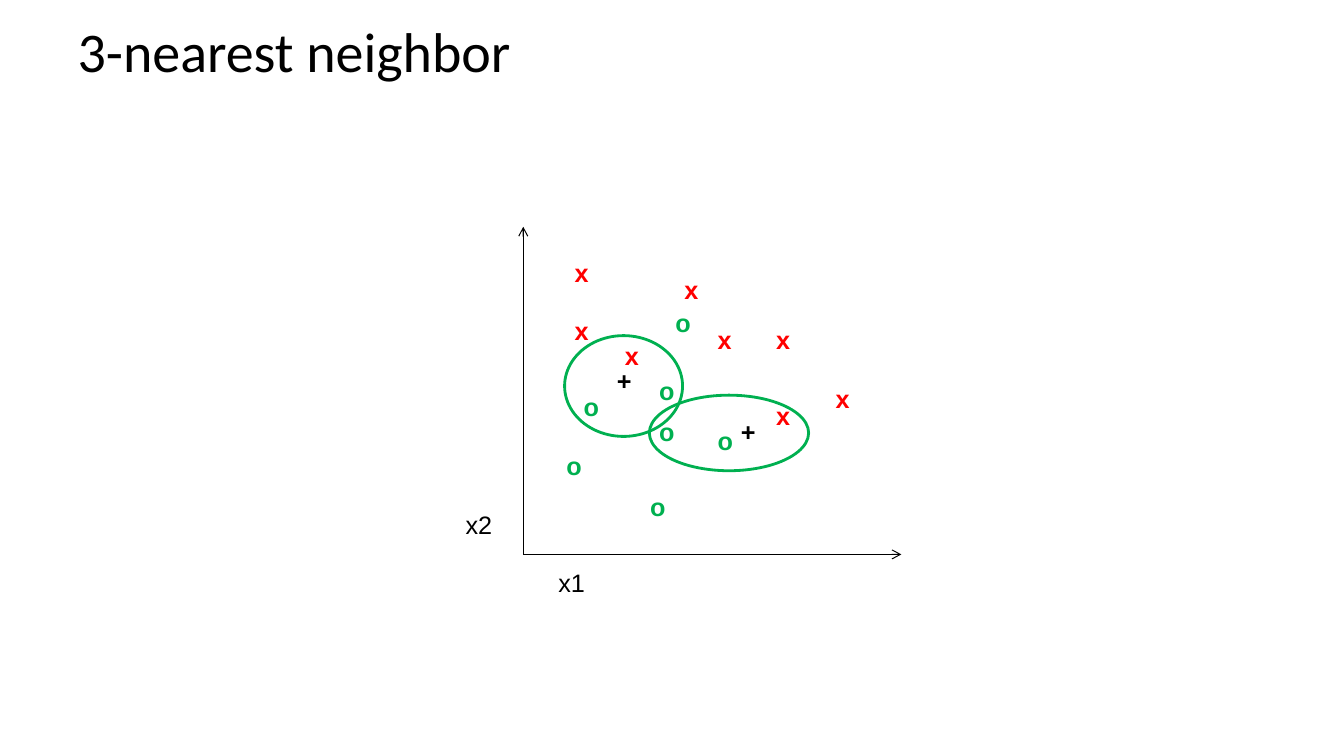
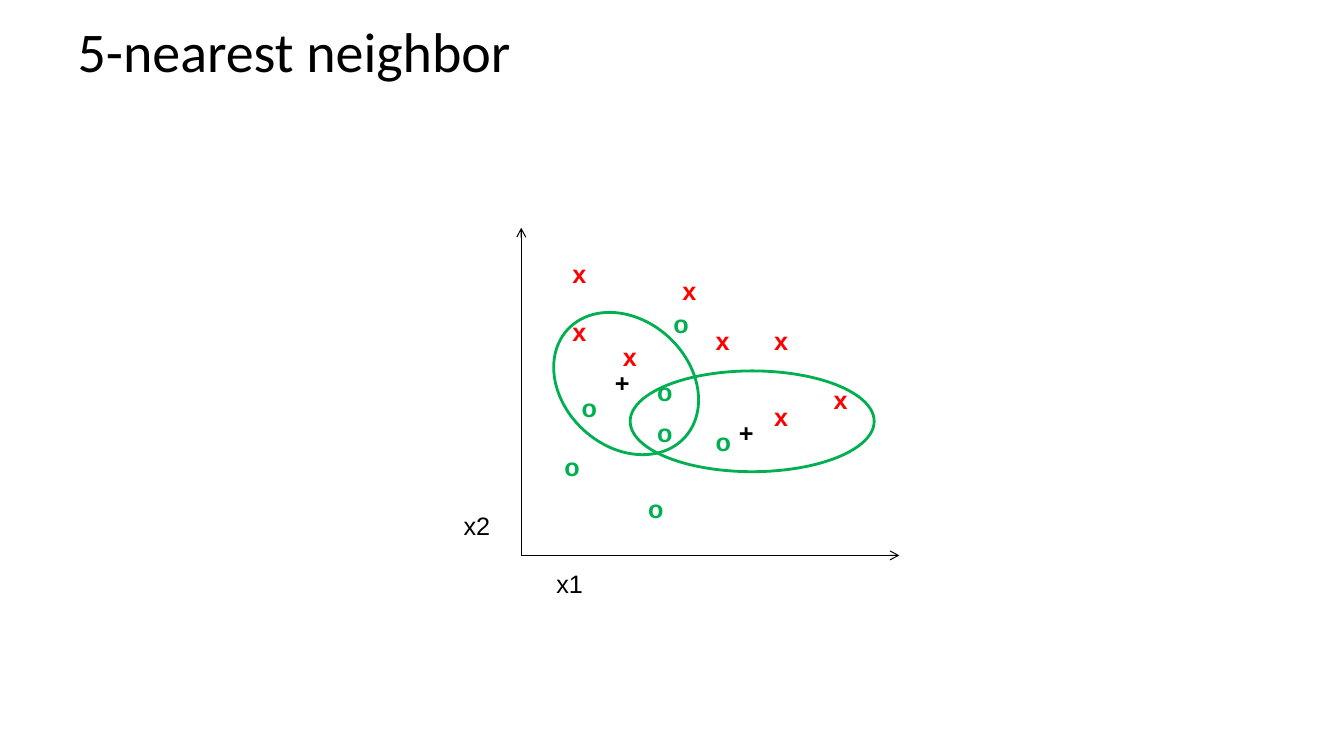
from dataclasses import dataclass

from lxml.etree import SubElement
from pptx import Presentation
from pptx.dml.color import RGBColor as Rgb
from pptx.enum.shapes import MSO_CONNECTOR as Link, MSO_SHAPE as Form
from pptx.enum.text import MSO_ANCHOR as Anchor, MSO_AUTO_SIZE as Fit, PP_ALIGN as Align
from pptx.oxml.ns import qn
from pptx.util import Emu, Pt

SCALE = 9144
BLACK = Rgb(0x00, 0x00, 0x00)
RED = Rgb(0xFF, 0x00, 0x00)
GREEN = Rgb(0x00, 0xB0, 0x50)
HEAD = {"name": "Calibri", "size": Pt(40), "bold": False}
AXIS = {"name": "Arial", "size": Pt(18), "bold": False}
MARK = {**AXIS, "bold": True}
TALL = 40


@dataclass(frozen=True)
class Kind:
    text: str
    wide: int
    color: Rgb
    style: dict
    spots: tuple[tuple[int, int], ...]


@dataclass(frozen=True)
class Ring:
    left: int
    top: int
    wide: int
    high: int
    turn: float = 0


@dataclass(frozen=True)
class Page:
    title: str
    shift: tuple[int, int]
    rings: tuple[Ring, ...]


PLOT = (
    Kind("x", 34, RED, MARK, (
        (702, 317), (760, 317), (760, 392), (819, 375),
        (560, 250), (560, 308), (669, 267), (610, 333))),
    Kind("o", 36, GREEN, MARK, (
        (660, 300), (702, 417), (552, 442), (569, 383),
        (635, 483), (644, 408), (644, 367))),
    Kind("x2", 47, BLACK, AXIS, ((452, 500),)),
    Kind("x1", 47, BLACK, AXIS, ((544, 558),)),
)
QUERY = Kind("+", 35, BLACK, MARK, ((602, 358), (725, 408)))
ORIGIN = (519, 550)
TIPS = ((519, 225), (894, 550))
PAGES = (
    Page("3-nearest neighbor", (0, 0),
         (Ring(560, 333, 117, 100), Ring(644, 392, 158, 75))),
    Page("5-nearest neighbor", (-2, 1),
         (Ring(542, 318, 158, 125, 42.8), Ring(625, 368, 242, 100))),
)


def px(*sizes: int) -> list[Emu]:
    return [Emu(size * SCALE) for size in sizes]


def style(item, values: dict) -> None:
    for name, value in values.items():
        setattr(item, name, value)


def write(frame, text: str, look: dict, color: Rgb) -> None:
    frame.text = text
    para = frame.paragraphs[0]
    para.alignment = Align.LEFT
    font = para.runs[0].font
    style(font, look)
    font.color.rgb = color


def add_title(slide, text: str) -> None:
    title = slide.shapes.title
    left, top, wide, high = px(67, 0, 1200, 100)
    style(title, {"left": left, "top": top, "width": wide, "height": high})
    frame = title.text_frame
    style(frame, {"auto_size": Fit.NONE, "vertical_anchor": Anchor.MIDDLE})
    write(frame, text, HEAD, BLACK)


def add_marks(shapes, kind: Kind, shift: tuple[int, int]) -> None:
    for left, top in kind.spots:
        box = shapes.add_textbox(
            *px(left + shift[0], top + shift[1], kind.wide, TALL))
        frame = box.text_frame
        style(frame, {"word_wrap": False, "auto_size": Fit.SHAPE_TO_FIT_TEXT})
        write(frame, kind.text, kind.style, kind.color)


def add_axis(shapes, tip: tuple[int, int], shift: tuple[int, int]) -> None:
    ends = [spot + move for point in (ORIGIN, tip)
            for spot, move in zip(point, shift)]
    axis = shapes.add_connector(Link.STRAIGHT, *px(*ends))
    axis.line.color.rgb = BLACK
    axis.line.width = Pt(0.75)
    SubElement(axis.line._get_or_add_ln(), qn("a:tailEnd"), type="arrow")
    SubElement(axis._element.spPr, qn("a:effectLst"))


def add_ring(shapes, ring: Ring) -> None:
    oval = shapes.add_shape(
        Form.OVAL, *px(ring.left, ring.top, ring.wide, ring.high))
    oval.rotation = ring.turn
    oval.shadow.inherit = False
    oval.fill.background()
    oval.line.color.rgb = GREEN
    oval.line.width = Pt(2)


def add_page(deck, page: Page) -> None:
    slide = deck.slides.add_slide(deck.slide_layouts.get_by_name("Title Only"))
    add_title(slide, page.title)
    plot = slide.shapes.add_group_shape().shapes
    for kind in PLOT:
        add_marks(plot, kind, page.shift)
    for tip in TIPS:
        add_axis(plot, tip, page.shift)
    add_marks(slide.shapes, QUERY, page.shift)
    for ring in page.rings:
        add_ring(slide.shapes, ring)


def main() -> None:
    deck = Presentation()
    deck.slide_width, deck.slide_height = px(1333, 750)
    for page in PAGES:
        add_page(deck, page)
    deck.save("out.pptx")


if __name__ == "__main__":
    main()
